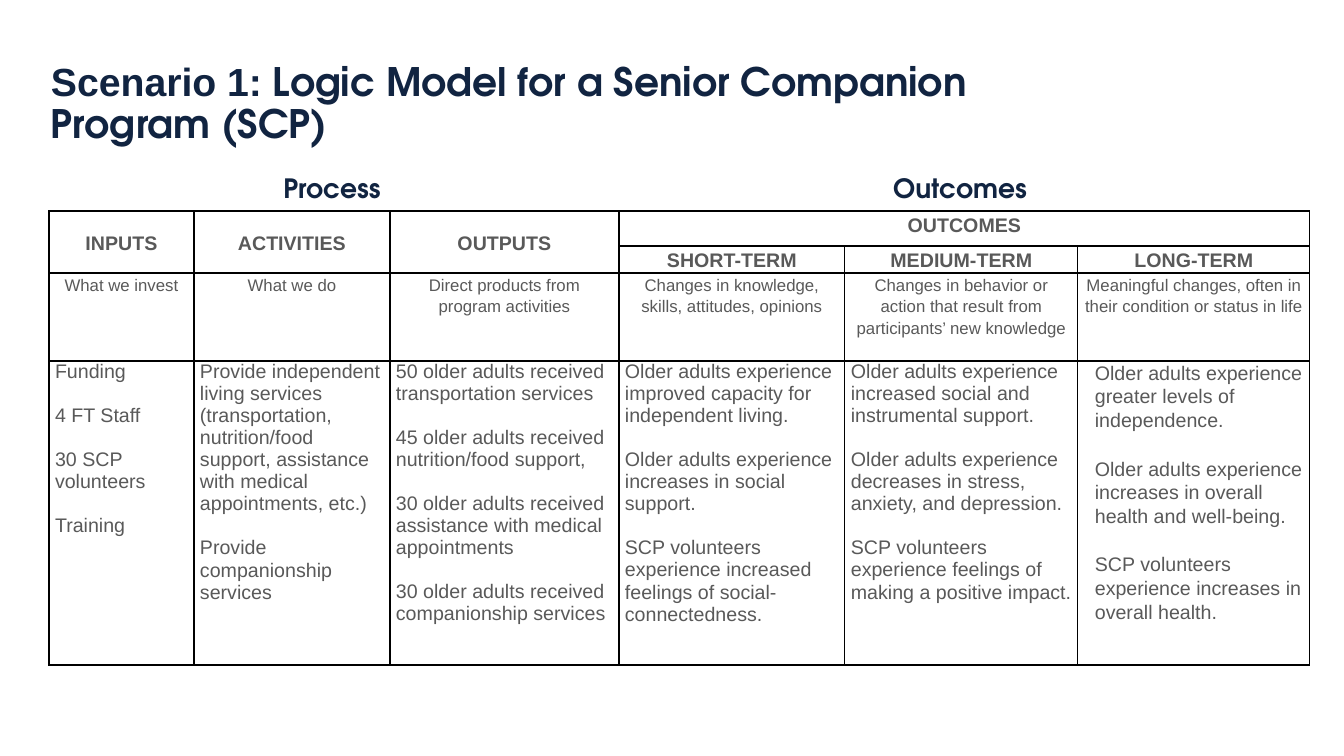
"""Build the logic model slide for a Senior Companion Program."""
from dataclasses import dataclass

from lxml.etree import SubElement
from pptx import Presentation
from pptx.dml.color import RGBColor
from pptx.enum.text import MSO_ANCHOR as Anchor, PP_ALIGN as Align
from pptx.oxml.ns import qn
from pptx.util import Pt

TITLE = ("Scenario 1: ", "Logic Model for a Senior Companion Program (SCP)")
TITLE_BOX = (51, 62, 953, 85)
HEADINGS = [("Process", (232, 168, 200, 40)), ("Outcomes", (860, 168, 200, 40))]

TABLE_ORIGIN = (49, 211)
COLUMN_WIDTHS = [145, 196, 229, 226, 233, 232]
ROW_HEIGHTS = [35, 26, 88, 304]
MERGES = [((0, 0), (1, 0)), ((0, 1), (1, 1)), ((0, 2), (1, 2)), ((0, 3), (0, 5))]
HEADERS = {
    (0, 0): "INPUTS", (0, 1): "ACTIVITIES", (0, 2): "OUTPUTS", (0, 3): "OUTCOMES",
    (1, 3): "SHORT-TERM", (1, 4): "MEDIUM-TERM", (1, 5): "LONG-TERM",
}
DESCRIPTIONS = [
    "What we invest",
    "What we do",
    "Direct products from program activities",
    "Changes in knowledge, skills, attitudes, opinions",
    "Changes in behavior or action that result from participants’ new knowledge",
    "Meaningful changes, often in their condition or status in life",
]
DETAILS = [
    ["Funding", "4 FT Staff", "30 SCP volunteers", "Training"],
    ["Provide independent living services (transportation, nutrition/food support, "
     "assistance with medical appointments, etc.)",
     "Provide companionship services"],
    ["50 older adults received transportation services",
     "45 older adults received nutrition/food support,",
     "30 older adults received assistance with medical appointments",
     "30 older adults received companionship services"],
    ["Older adults experience improved capacity for independent living.",
     "Older adults experience increases in social support.",
     "SCP volunteers experience increased feelings of social-connectedness."],
    ["Older adults experience increased social and instrumental support.",
     "Older adults experience decreases in stress, anxiety, and depression.",
     "SCP volunteers experience feelings of making a positive impact."],
    ["Older adults experience greater levels of independence.",
     "Older adults experience increases in overall health and well-being.",
     "SCP volunteers experience increases in overall health."],
]


@dataclass(frozen=True)
class Theme:
    """Colours, fonts and type sizes."""
    navy: str = "112441"
    gray: str = "595959"
    border: str = "000000"
    display: str = "TeX Gyre Adventor"
    body: str = "Arial"
    title: int = 28
    heading: int = 19
    cell: int = 14
    description: int = 12


THEME = Theme()


def px(value):
    """Convert px to EMU."""
    return round(value * 914400 / 100.8)


def style_run(run, name, size, color, bold=False):
    """Set the font of one run."""
    run.font.name = name
    run.font.size = Pt(size)
    run.font.bold = bold
    run.font.color.rgb = RGBColor.from_string(color)


def add_label(slide, box, parts, size, anchor, align, spacing):
    """Add a bold navy text box made of (text, font name) parts."""
    frame = slide.shapes.add_textbox(*map(px, box)).text_frame
    frame.word_wrap = True
    frame.vertical_anchor = anchor
    frame.margin_left = frame.margin_right = frame.margin_top = frame.margin_bottom = 0
    paragraph = frame.paragraphs[0]
    paragraph.alignment = align
    paragraph.line_spacing = spacing
    for text, name in parts:
        run = paragraph.add_run()
        run.text = text
        style_run(run, name, size, THEME.navy, True)


def prepare_cell(cell):
    """Clear the fill, set the margins and draw the four borders of a cell."""
    cell.margin_left = cell.margin_right = px(6)
    cell.margin_top = cell.margin_bottom = 0
    properties = cell._tc.get_or_add_tcPr()
    for side in ("a:lnL", "a:lnR", "a:lnT", "a:lnB"):
        line = SubElement(properties, qn(side), w=str(Pt(1)))
        fill = SubElement(line, qn("a:solidFill"))
        SubElement(fill, qn("a:srgbClr"), val=THEME.border)
    cell.fill.background()


def fill_cell(cell, texts, size, bold=False, align=Align.LEFT, spacing=1.0, gap=0, indent=0):
    """Write one paragraph per text into a cell."""
    cell.text_frame.text = "\n".join(texts)
    for index, paragraph in enumerate(cell.text_frame.paragraphs):
        paragraph.alignment = align
        paragraph.line_spacing = spacing
        if index:
            paragraph.space_before = Pt(gap)
        if indent:
            paragraph._p.get_or_add_pPr().set("marL", str(px(indent)))
        style_run(paragraph.runs[0], THEME.body, size, THEME.gray, bold)


def add_logic_table(slide):
    """Add the logic model table."""
    size = (sum(COLUMN_WIDTHS), sum(ROW_HEIGHTS))
    table = slide.shapes.add_table(
        len(ROW_HEIGHTS), len(COLUMN_WIDTHS), *map(px, TABLE_ORIGIN + size)).table
    table.first_row = table.horz_banding = False
    for column, width in zip(table.columns, COLUMN_WIDTHS):
        column.width = px(width)
    for row, height in zip(table.rows, ROW_HEIGHTS):
        row.height = px(height)
    for cell in table.iter_cells():
        prepare_cell(cell)
    for start, end in MERGES:
        table.cell(*start).merge(table.cell(*end))
    for position, text in HEADERS.items():
        cell = table.cell(*position)
        fill_cell(cell, [text], THEME.cell, True, Align.CENTER, 1.15)
        if cell.span_height > 1:
            cell.vertical_anchor = Anchor.MIDDLE
    last = len(COLUMN_WIDTHS) - 1
    for column, (description, details) in enumerate(zip(DESCRIPTIONS, DETAILS)):
        fill_cell(table.cell(2, column), [description], THEME.description,
                  align=Align.CENTER, spacing=1.15)
        layout = (dict(spacing=1.07, gap=18, indent=11) if column == last
                  else dict(gap=15.7))
        fill_cell(table.cell(3, column), details, THEME.cell, **layout)


def main():
    """Assemble and save the slide."""
    presentation = Presentation()
    presentation.slide_width, presentation.slide_height = px(1344), px(756)
    slide = presentation.slides.add_slide(presentation.slide_layouts[6])
    add_label(slide, TITLE_BOX, zip(TITLE, (THEME.body, THEME.display)),
              THEME.title, Anchor.BOTTOM, Align.LEFT, 0.9)
    for text, box in HEADINGS:
        add_label(slide, box, [(text, THEME.display)], THEME.heading,
                  Anchor.MIDDLE, Align.CENTER, 1.0)
    add_logic_table(slide)
    presentation.save("out.pptx")


if __name__ == "__main__":
    main()
